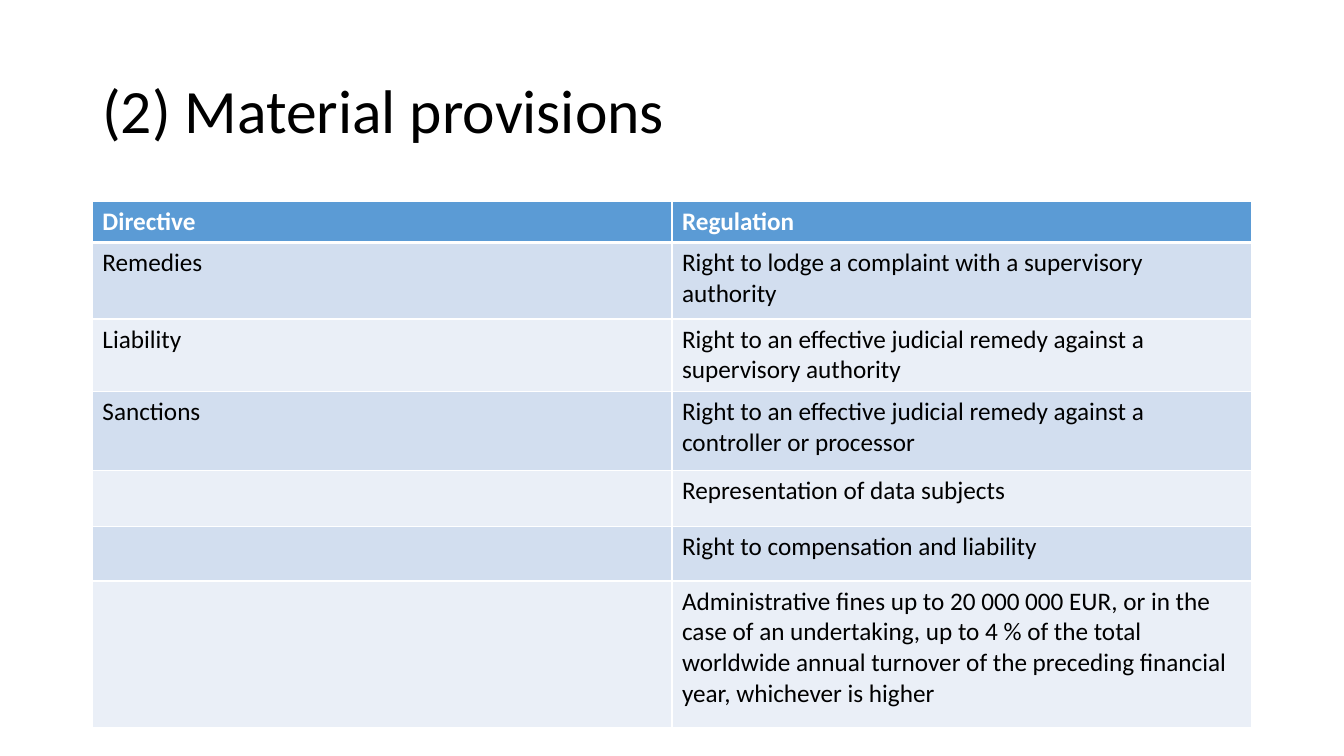
from lxml import etree
from pptx import Presentation
from pptx import util as u
from pptx.dml.color import RGBColor
from pptx.enum import text
from pptx.oxml import ns

COLOURS = {"header": "5B9BD5", "odd": "D2DEEF", "even": "EAEFF7",
           "light": "FFFFFF", "dark": "000000"}
FONT = "Calibri"
LEFT, WIDTH = u.Pt(66), u.Pt(828)

# Row height in points, then the two cell texts
PROVISIONS = [
    (29.2, "Directive", "Regulation"),
    (54.7, "Remedies", "Right to lodge a complaint with a supervisory authority"),
    (52, "Liability",
     "Right to an effective judicial remedy against a supervisory authority"),
    (56, "Sanctions",
     "Right to an effective judicial remedy against a controller or processor"),
    (40.3, "", "Representation of data subjects"),
    (38.9, "", "Right to compensation and liability"),
    (105, "", "Administrative fines up to 20 000 000 EUR, or in the case of an "
     "undertaking, up to 4 % of the total worldwide annual turnover of the "
     "preceding financial year, whichever is higher"),
]


def colour(name):
    return RGBColor.from_string(COLOURS[name])


def write(para, words, size, shade, bold=False):
    span = para.add_run()
    span.text = words
    for key, value in {"name": FONT, "size": u.Pt(size), "bold": bold}.items():
        setattr(span.font, key, value)
    span.font.color.rgb = colour(shade)


def add_title(page, words):
    box = page.shapes.add_textbox(LEFT, u.Pt(28.75), WIDTH, u.Pt(104.4))
    frame = box.text_frame
    frame.word_wrap = True
    frame.vertical_anchor = text.MSO_ANCHOR.MIDDLE
    para = frame.paragraphs[0]
    para.line_spacing = 0.9
    write(para, words, 44, "dark")


def add_borders(cell, widths):
    properties = cell._tc.get_or_add_tcPr()
    for index, (side, width) in enumerate(widths.items()):
        line = etree.Element(ns.qn(f"a:ln{side}"), w=str(u.Pt(width)))
        fill = etree.SubElement(line, ns.qn("a:solidFill"))
        etree.SubElement(fill, ns.qn("a:srgbClr"), val=COLOURS["light"])
        properties.insert(index, line)


def add_provisions(page, rows):
    height = u.Pt(sum(row[0] for row in rows))
    table = page.shapes.add_table(len(rows), 2, LEFT, u.Pt(144), WIDTH, height).table
    for r, (row_height, *words) in enumerate(rows):
        table.rows[r].height = u.Pt(row_height)
        header = r == 0
        band = "header" if header else "odd" if r % 2 else "even"
        for c, entry in enumerate(words):
            cell = table.cell(r, c)
            cell.fill.solid()
            cell.fill.fore_color.rgb = colour(band)
            # The rule under the header row is heavier
            add_borders(cell, {"L": 1, "R": 1, "T": 3 if r == 1 else 1,
                               "B": 3 if header else 1})
            if entry:
                write(cell.text_frame.paragraphs[0], entry, 18,
                      "light" if header else "dark", header)


def main():
    deck = Presentation()
    deck.slide_width, deck.slide_height = u.Pt(960), u.Pt(540)
    page = deck.slides.add_slide(deck.slide_layouts[6])
    add_title(page, "(2) Material provisions")
    add_provisions(page, PROVISIONS)
    deck.save("out.pptx")


if __name__ == "__main__":
    main()
